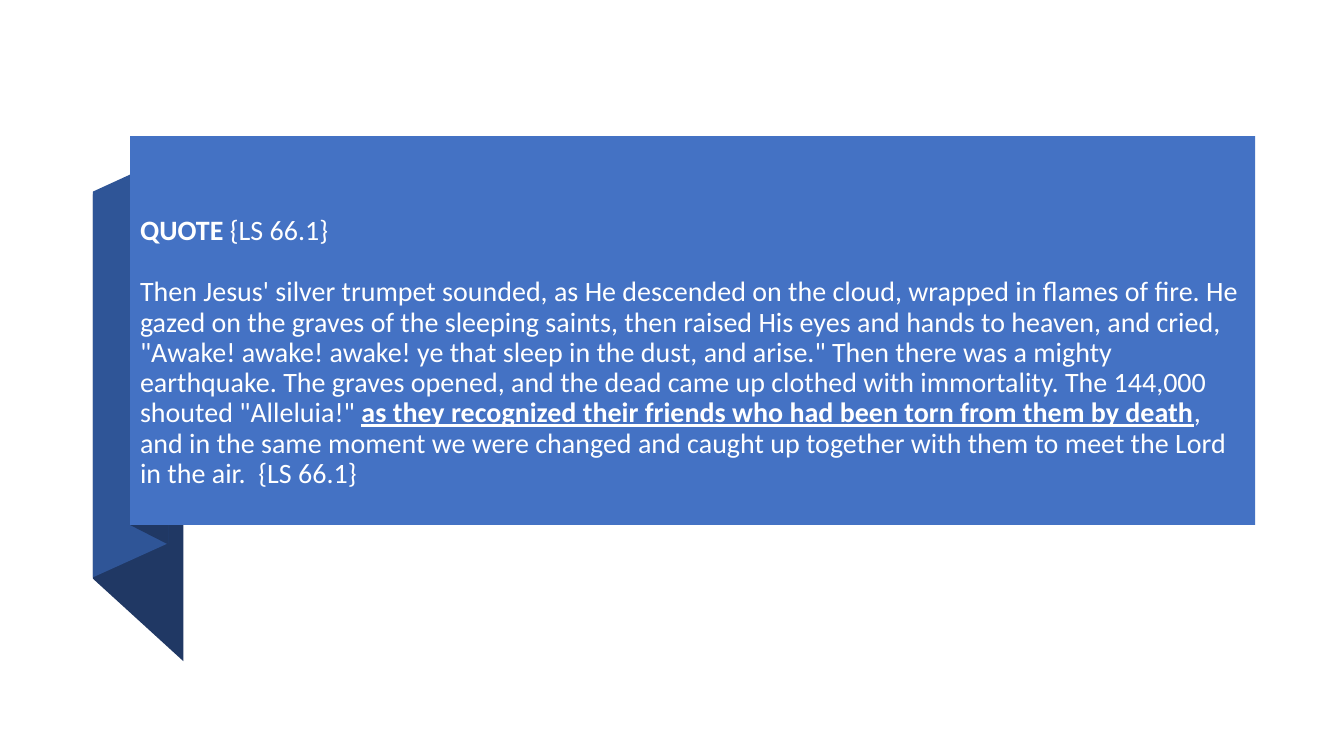
"""Builds a slide with a quotation on a folded blue ribbon."""
from pptx import Presentation
from pptx.dml.color import RGBColor
from pptx.enum.shapes import MSO_SHAPE
from pptx.enum.text import MSO_ANCHOR, PP_ALIGN
from pptx.util import Cm, Pt

NAVY = RGBColor(0x20, 0x38, 0x64)
MID_BLUE = RGBColor(0x2F, 0x55, 0x97)
BLUE = RGBColor(0x44, 0x72, 0xC4)
WHITE = RGBColor(0xFF, 0xFF, 0xFF)


def paint(shape, color):
    shape.shadow.inherit = False
    shape.fill.solid()
    shape.fill.fore_color.rgb = color
    shape.line.fill.background()


deck = Presentation()
deck.slide_width, deck.slide_height = Cm(33.87), Cm(19.05)
page = deck.slides.add_slide(deck.slide_layouts[6])

ribbon_folds = [
    (NAVY, [(2.34, 14.58), (4.62, 16.66), (4.62, 7.01), (2.34, 4.9)]),
    (MID_BLUE, [(2.34, 14.55), (4.24, 13.69), (4.24, 3.96), (2.34, 4.83)]),
    (NAVY, [(3.28, 13.23), (4.24, 13.72), (4.24, 3.94), (3.28, 3.45)]),
]
for color, corners in ribbon_folds:
    points = [(Cm(x), Cm(y)) for x, y in corners]
    builder = page.shapes.build_freeform(*points[0])
    builder.add_line_segments(points[1:], close=True)
    paint(builder.convert_to_shape(), color)

banner_area = Cm(3.28), Cm(3.43), Cm(28.35), Cm(9.8)
banner = page.shapes.add_shape(MSO_SHAPE.RECTANGLE, *banner_area)
paint(banner, BLUE)

box = page.shapes.add_textbox(*banner_area)
frame = box.text_frame
frame_format = {
    "word_wrap": True,
    "vertical_anchor": MSO_ANCHOR.BOTTOM,
    "margin_bottom": Cm(0.9),
}
for name, value in frame_format.items():
    setattr(frame, name, value)

quote = [
    (0, [("QUOTE ", {"bold": True}), ("{LS 66.1}", {})]),
    (22, [
        ("Then Jesus' silver trumpet sounded, as He descended on the cloud, "
         "wrapped in flames of fire. He gazed on the graves of the sleeping "
         "saints, then raised His eyes and hands to heaven, and cried, "
         "\"Awake! awake! awake! ye that sleep in the dust, and arise.\" "
         "Then there was a mighty earthquake. The graves opened, and the dead "
         "came up clothed with immortality. The 144,000 shouted \"Alleluia!\" ", {}),
        ("as they recognized their friends who had been torn from them by death",
         {"bold": True, "underline": True}),
        (", and in the same moment we were changed and caught up together "
         "with them to meet the Lord in the air.  {LS 66.1}", {}),
    ]),
]
for index, (gap, spans) in enumerate(quote):
    para = frame.add_paragraph() if index else frame.paragraphs[0]
    para_format = {
        "alignment": PP_ALIGN.LEFT,
        "line_spacing": 0.9,
        "space_before": Pt(gap),
    }
    for name, value in para_format.items():
        setattr(para, name, value)
    for text, emphasis in spans:
        span = para.add_run()
        span.text = text
        span.font.color.rgb = WHITE
        span_format = {"name": "Calibri", "size": Pt(20), "bold": False}
        for name, value in (span_format | emphasis).items():
            setattr(span.font, name, value)

deck.save("out.pptx")
